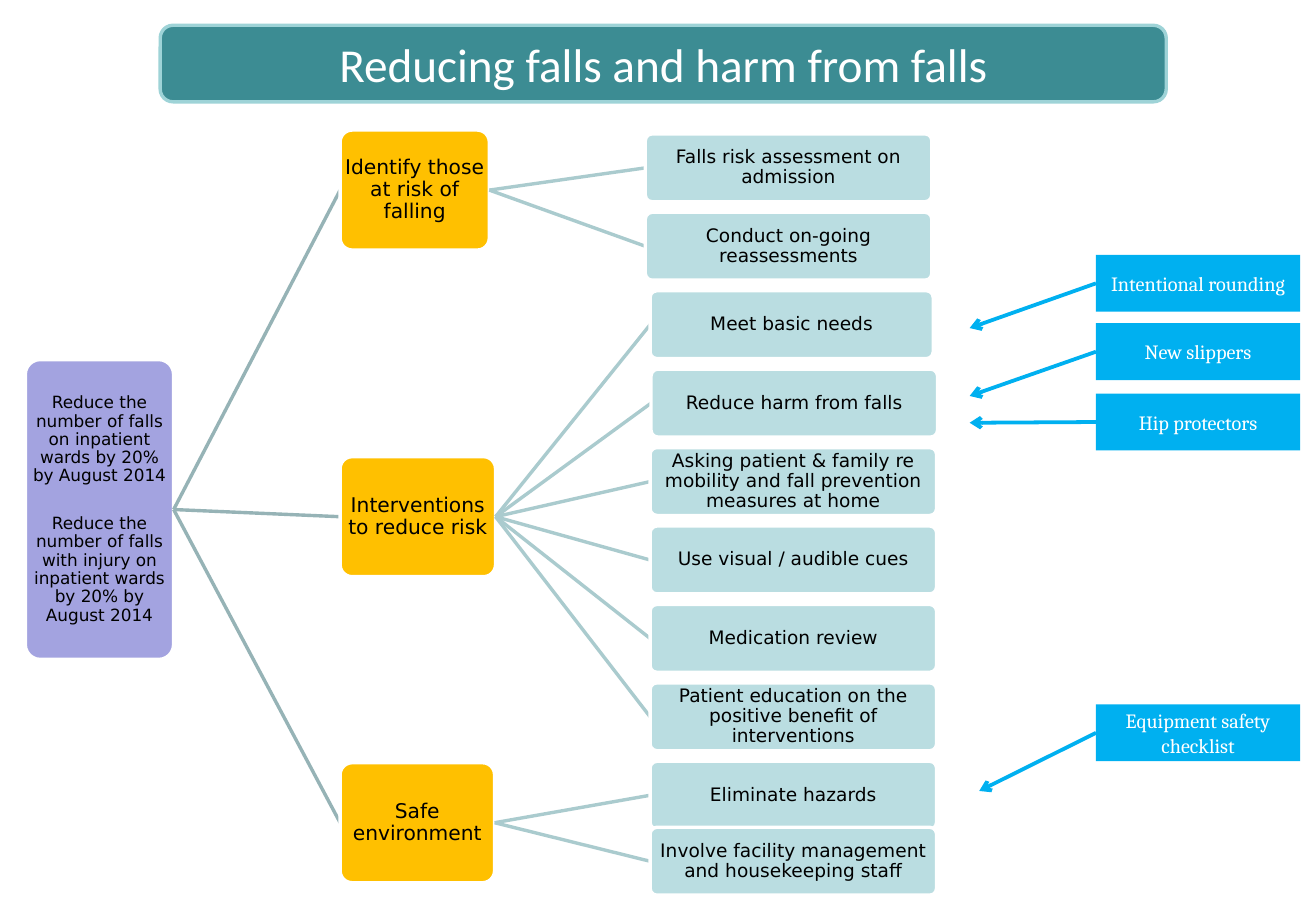
from lxml import etree
from pptx import Presentation
from pptx.dml.color import RGBColor
from pptx.enum.shapes import MSO_CONNECTOR, MSO_SHAPE
from pptx.enum.text import MSO_ANCHOR, PP_ALIGN
from pptx.oxml.ns import qn
from pptx.util import Cm, Pt

ROUNDED, RECT = MSO_SHAPE.ROUNDED_RECTANGLE, MSO_SHAPE.RECTANGLE
STRAIGHT = MSO_CONNECTOR.STRAIGHT
MIDDLE, CENTER = MSO_ANCHOR.MIDDLE, PP_ALIGN.CENTER

WHITE = RGBColor(0xFF, 0xFF, 0xFF)
BLACK = RGBColor(0x00, 0x00, 0x00)
TEAL = RGBColor(0x3C, 0x8C, 0x93)
TEAL_EDGE = RGBColor(0x9E, 0xD3, 0xD7)
LILAC = RGBColor(0xA3, 0xA3, 0xE0)
AMBER = RGBColor(0xFF, 0xC0, 0x00)
PALE_TEAL = RGBColor(0xBA, 0xDD, 0xE1)
AIM_LINE = RGBColor(0x96, 0xB3, 0xB6)
DRIVER_LINE = RGBColor(0xAA, 0xCB, 0xCE)
SKY = RGBColor(0x00, 0xB0, 0xF0)

TREE_FRAME = {"margin_left": Cm(0.03), "margin_right": Cm(0.03),
              "margin_top": Cm(0.03), "margin_bottom": Cm(0.03)}
CALLOUT_FRAME = {"margin_left": Cm(0.1), "margin_right": Cm(0.1)}

TITLE = {"kind": ROUNDED, "fill": TEAL, "edge": TEAL_EDGE, "frame": {},
         "font": {"name": "Calibri", "size": Pt(28)}, "color": WHITE, "para": {}}
AIM = {"kind": ROUNDED, "fill": LILAC, "edge": WHITE, "adj": 0.1, "frame": TREE_FRAME,
       "font": {"name": "DejaVu Sans", "size": Pt(10)}, "color": BLACK,
       "para": {"line_spacing": 0.9}}
DRIVER = {**AIM, "fill": AMBER, "font": {"name": "DejaVu Sans", "size": Pt(12)}}
ACTION = {**AIM, "fill": PALE_TEAL, "font": {"name": "DejaVu Sans", "size": Pt(11)}}
CALLOUT = {"kind": RECT, "fill": SKY, "edge": None, "frame": CALLOUT_FRAME,
           "font": {"name": "Cambria", "size": Pt(12)}, "color": WHITE, "para": {}}

AIMS = ["Reduce the number of falls on inpatient wards by 20% by August 2014",
        "Reduce the number of falls with injury on inpatient wards by 20% by August 2014"]
DRIVERS = [
    ("Identify those at risk of falling", 2.72, 3.12, [
        ("Falls risk assessment on admission", 13.49, 5.99),
        ("Conduct on-going reassessments", 13.49, 5.99)]),
    ("Interventions to reduce risk", 9.55, 3.25, [
        ("Meet basic needs", 13.59, 5.92),
        ("Reduce harm from falls", 13.61, 5.99),
        ("Asking patient & family re mobility and fall prevention measures at home",
         13.59, 5.99),
        ("Use visual / audible cues", 13.59, 5.99),
        ("Medication review", 13.59, 5.99),
        ("Patient education on the positive benefit of interventions", 13.59, 5.99)]),
    ("Safe environment", 15.95, 3.23, [
        ("Eliminate hazards", 13.59, 5.99),
        ("Involve facility management and housekeeping staff", 13.59, 5.99)]),
]
ACTION_TOPS = [2.8 + 1.64 * i for i in range(9)] + [17.3]
CALLOUTS = [
    ("Intentional rounding", 5.33, (20.27, 6.86)),
    ("New slippers", 6.76, (20.27, 8.28)),
    ("Hip protectors", 8.23, (20.27, 8.84)),
    ("Equipment safety checklist", 14.73, (20.47, 16.54)),
]


def set_all(obj, values):
    for name, value in values.items():
        setattr(obj, name, value)


def add_box(s, box, style, texts):
    sp = s.shapes.add_shape(style["kind"], *map(Cm, box))
    sp.shadow.inherit = False
    if "adj" in style:
        sp.adjustments[0] = style["adj"]
    sp.fill.solid()
    sp.fill.fore_color.rgb = style["fill"]
    if style["edge"] is None:
        sp.line.fill.background()
    else:
        sp.line.color.rgb = style["edge"]
        sp.line.width = Pt(2)
    tf = sp.text_frame
    set_all(tf, {"word_wrap": True, "vertical_anchor": MIDDLE, **style["frame"]})
    for i, text in enumerate(texts):
        p = tf.add_paragraph() if i else tf.paragraphs[0]
        set_all(p, {"alignment": CENTER, **style["para"]})
        if i:
            p.space_before = Pt(17.5)
        r = p.add_run()
        r.text = text
        set_all(r.font, style["font"])
        r.font.color.rgb = style["color"]


def add_line(s, start, end, color, width=2, arrow=False):
    c = s.shapes.add_connector(STRAIGHT, *map(Cm, start + end))
    c.line.color.rgb = color
    c.line.width = Pt(width)
    if arrow:
        etree.SubElement(c.line._get_or_add_ln(), qn("a:tailEnd"), type="arrow")
    etree.SubElement(c._element.spPr, qn("a:effectLst"))


def left_mid(box):
    x, y, w, h = box
    return x, y + h / 2


def right_mid(box):
    x, y, w, h = box
    return x + w, y + h / 2


def add_driver_tree(s, aim_box):
    add_box(s, aim_box, AIM, AIMS)
    tops = iter(ACTION_TOPS)
    for driver, y, w, actions in DRIVERS:
        driver_box = (7.11, y, w, 2.51)
        add_line(s, right_mid(aim_box), left_mid(driver_box), AIM_LINE)
        add_box(s, driver_box, DRIVER, [driver])
        for action, x, action_w in actions:
            action_box = (x, next(tops), action_w, 1.42)
            add_line(s, right_mid(driver_box), left_mid(action_box), DRIVER_LINE)
            add_box(s, action_box, ACTION, [action])


def add_callout(s, box, text, target):
    add_box(s, box, CALLOUT, [text])
    add_line(s, left_mid(box), target, SKY, 2.25, arrow=True)


def main():
    prs = Presentation()
    prs.slide_width, prs.slide_height = Cm(27.51), Cm(19.05)
    s = prs.slides.add_slide(prs.slide_layouts[6])
    add_box(s, (3.35, 0.53, 21.03, 1.6), TITLE, ["Reducing falls and harm from falls"])
    add_driver_tree(s, (0.53, 7.52, 3.1, 6.27))
    for text, y, target in CALLOUTS:
        add_callout(s, (22.91, y, 4.27, 1.19), text, target)
    prs.save("out.pptx")


if __name__ == "__main__":
    main()
